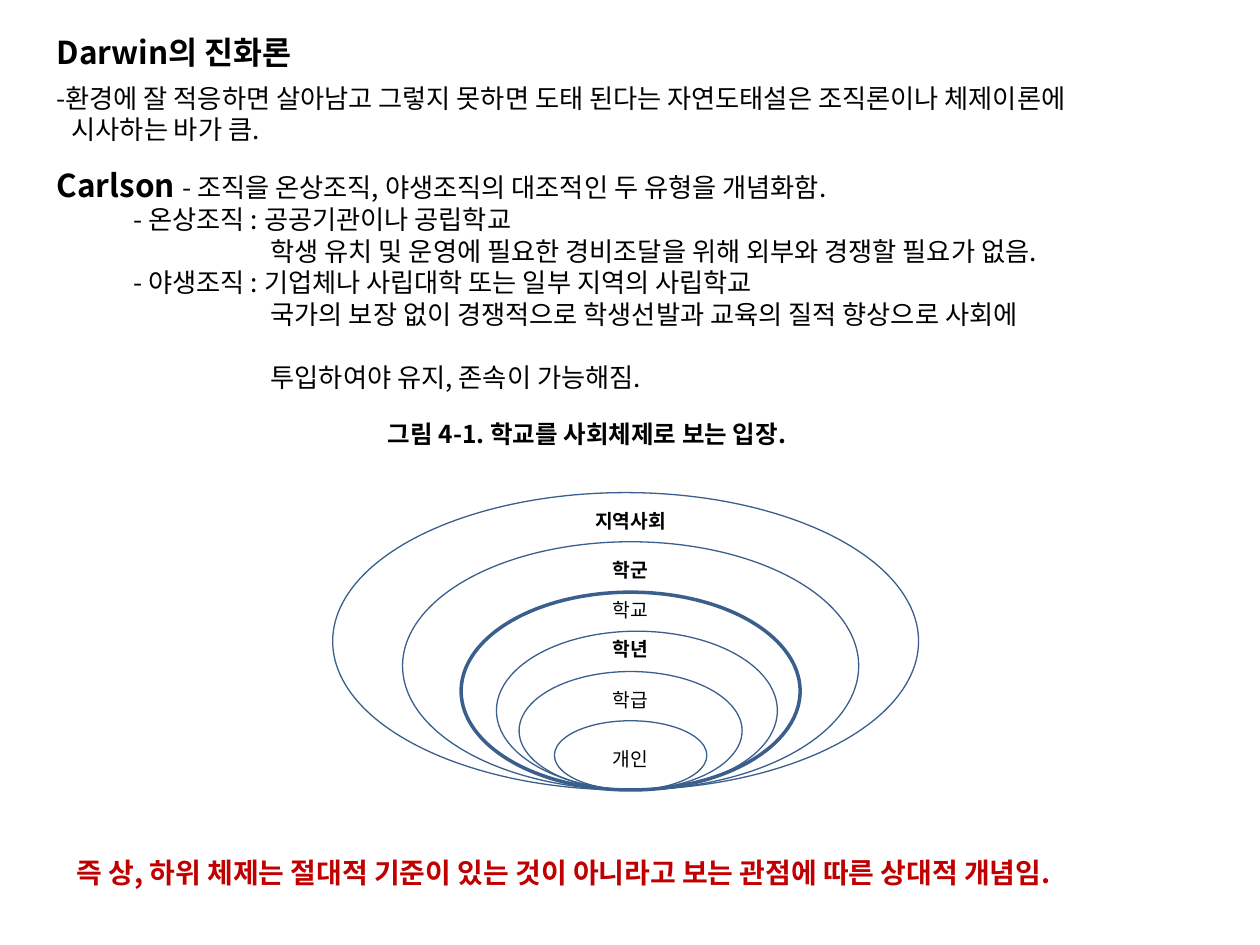
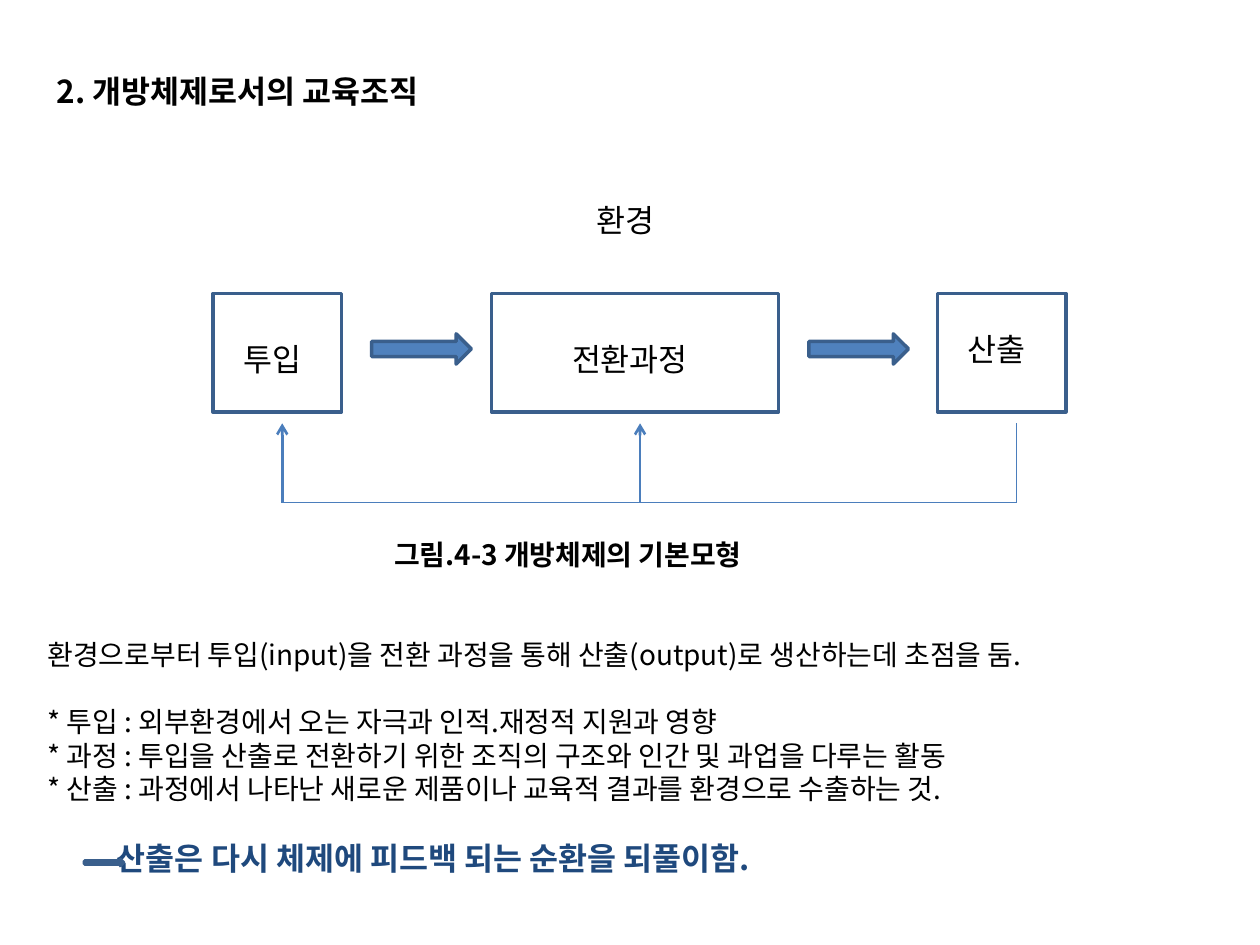
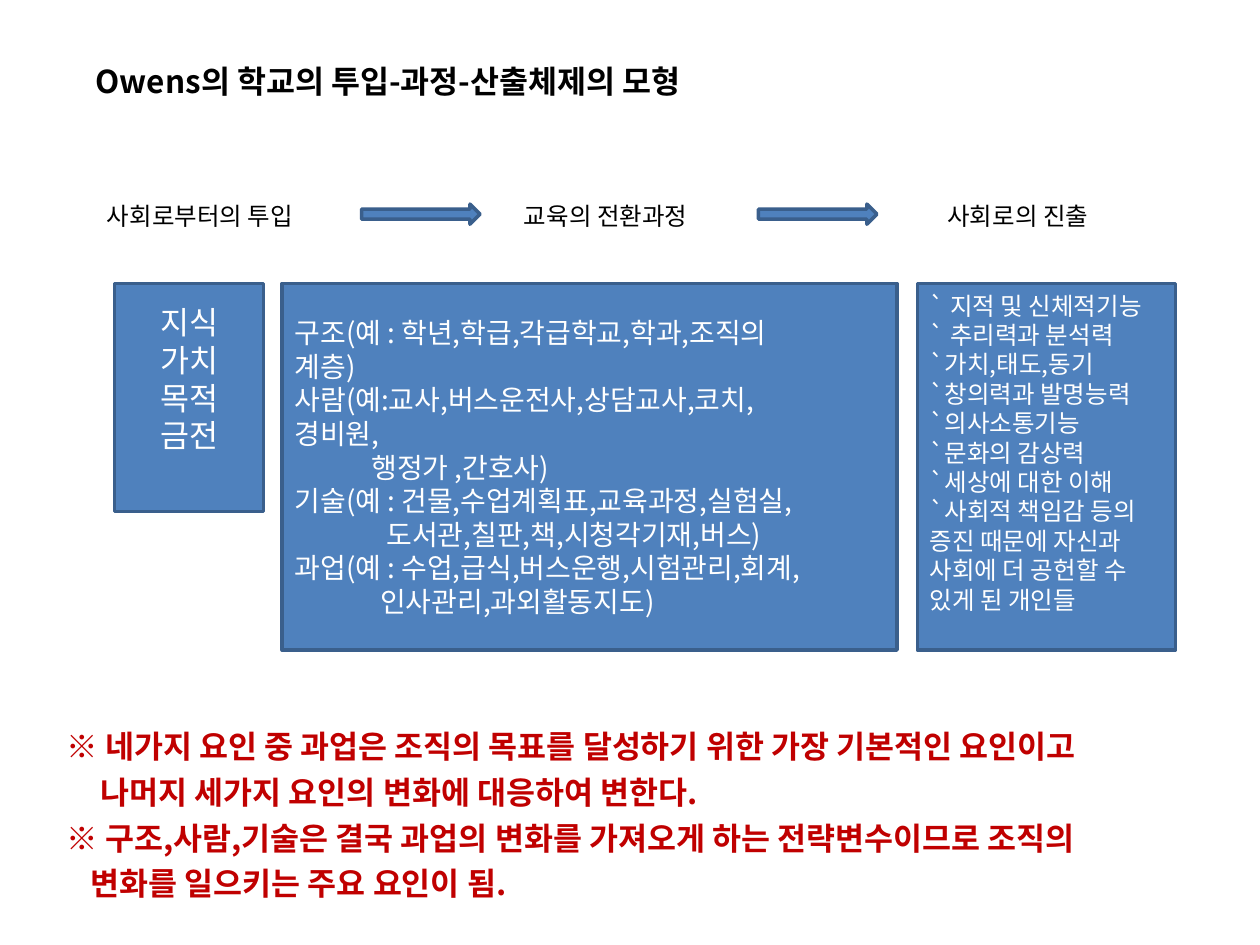
from dataclasses import dataclass

from pptx import Presentation
from pptx.dml.color import RGBColor as Rgb
from pptx.enum.shapes import MSO_CONNECTOR as Conn, MSO_SHAPE as Kind
from pptx.enum.text import MSO_ANCHOR as Anchor, MSO_AUTO_SIZE as Auto, PP_ALIGN as Align
from pptx.oxml.ns import qn
from pptx.util import Inches, Pt
from lxml.etree import SubElement as Sub


@dataclass(frozen=True)
class Theme:
    font: str = "Noto Sans CJK KR"
    ink: str = "000000"
    white: str = "FFFFFF"
    red: str = "C00000"
    navy: str = "1F497D"
    fill: str = "4F81BD"
    edge: str = "3A5F8C"
    wire: str = "4B7EBC"
    head: int = 18
    note: int = 16
    body: int = 15
    small: int = 14
    tiny: int = 11
    thin: float = 0.75
    mid: float = 1.5
    thick: float = 2
    lead: float = 1.2
    loose: float = 1.45


T = Theme()


def color(code):
    return Rgb.from_string(code)


def add_run(para, words, size, bold, ink):
    run = para.add_run()
    run.text = words
    font = run.font
    font.name, font.size, font.bold = T.font, Pt(size), bold
    font.color.rgb = color(ink)
    Sub(run._r.get_or_add_rPr(), qn("a:ea")).set("typeface", T.font)


def write(frame, lines, size=T.head, bold=False, ink=T.ink, align=Align.LEFT,
          anchor=Anchor.TOP, pitch=T.lead):
    frame.word_wrap = True
    frame.auto_size = Auto.NONE
    frame.vertical_anchor = anchor
    for i, line in enumerate([lines] if isinstance(lines, str) else lines):
        words, own = (line, {}) if isinstance(line, str) else line
        para = frame.add_paragraph() if i else frame.paragraphs[0]
        para.alignment = align
        look = own.get("size", size), own.get("bold", bold), own.get("ink", ink)
        tall = T.head if "lead" in own else look[0]
        para.line_spacing = Pt(round(tall * pitch, 1))
        para.space_before = Pt(own.get("gap", 0))
        props = para._p.get_or_add_pPr()
        props.set("marL", str(Inches(own.get("dent", 0))))
        props.set("indent", "0")
        if "mark" in own:
            Sub(props, qn("a:buFont")).set("typeface", T.font)
            Sub(props, qn("a:buChar")).set("char", own["mark"])
        if "lead" in own:
            add_run(para, own["lead"], T.head, True, ink)
        for n, part in enumerate(words.split("\n")):
            if n:
                para.add_line_break()
            add_run(para, part, *look)


def rect(box):
    return [Inches(v) for v in box]


def label(slide, box, lines, **look):
    write(slide.shapes.add_textbox(*rect(box)).text_frame, lines, **look)


def shape(slide, kind, box, fill=None, width=T.thick):
    item = slide.shapes.add_shape(kind, *rect(box))
    item.shadow.inherit = False
    if fill:
        item.fill.solid()
        item.fill.fore_color.rgb = color(fill)
    else:
        item.fill.background()
    item.line.color.rgb = color(T.edge)
    item.line.width = Pt(width)
    return item


def arrow(slide, box):
    shape(slide, Kind.RIGHT_ARROW, box, T.fill)


def wire(slide, start, end, width=T.thin, tip=False):
    line = slide.shapes.add_connector(Conn.STRAIGHT, *rect(start + end))
    line.line.color.rgb = color(T.wire)
    line.line.width = Pt(width)
    if tip:
        Sub(line.line._get_or_add_ln(), qn("a:tailEnd")).set("type", "arrow")
    Sub(line._element.spPr, qn("a:effectLst"))


def start(deck, title, box):
    slide = deck.slides.add_slide(deck.slide_layouts[5])
    head = slide.shapes.title
    head.left, head.top, head.width, head.height = rect(box)
    write(head.text_frame, title, bold=True)
    return slide


def rings(slide, box):
    left, top, wide, high = box
    mid, base = left + wide / 2, top + high
    levels = [
        ("개인", 1.21, 0.55, 0.16, False),
        ("학급", 1.77, 0.94, 0.08, False),
        ("학년", 2.23, 1.26, 0, True),
        ("학교", 2.69, 1.57, 0, False),
        ("학군", 3.62, 1.97, 0.08, True),
        ("지역사회", wide, high, 0.08, True),
    ]
    for name, w, h, drop, bold in levels:
        width = T.thick if name == "학교" else T.thin
        nudge = {"지역사회": -0.04, "학년": 0.05}.get(name, 0)
        ring = mid + 0.04 + nudge - w / 2
        shape(slide, Kind.OVAL, (ring, base - h, w, h), width=width)
        label(slide, (mid - 0.47, base - h + drop, 1.02, 0.29), name,
              size=T.tiny, bold=bold, align=Align.CENTER)


def theory(deck):
    slide = start(deck, "Darwin의 진화론", (0.35, 0.21, 4, 0.4))
    item, more = {"dent": 0.61}, {"dent": 1.7}
    label(slide, (0.35, 0.6, 9.21, 2.59), [
        ("환경에 잘 적응하면 살아남고 그렇지 못하면 도태 된다는 자연도태설은 조직론이나 체제이론에",
         {"mark": "-"}),
        ("시사하는 바가 큼.", {"dent": 0.12}),
        ("- 조직을 온상조직, 야생조직의 대조적인 두 유형을 개념화함.",
         {"lead": "Carlson ", "gap": 12}),
        ("- 온상조직 : 공공기관이나 공립학교", item),
        ("학생 유치 및 운영에 필요한 경비조달을 위해 외부와 경쟁할 필요가 없음.", more),
        ("- 야생조직 : 기업체나 사립대학 또는 일부 지역의 사립학교", item),
        ("국가의 보장 없이 경쟁적으로 학생선발과 교육의 질적 향상으로 사회에", more),
        ("투입하여야 유지, 존속이 가능해짐.", {"dent": 1.7, "gap": 18}),
    ], size=T.body)
    label(slide, (2.98, 3.28, 4.2, 0.34), "그림 4-1. 학교를 사회체제로 보는 입장.",
          size=T.small, bold=True)
    rings(slide, (2.64, 3.91, 4.65, 2.36))
    label(slide, (0.51, 6.74, 9.21, 0.37),
          "즉 상, 하위 체제는 절대적 기준이 있는 것이 아니라고 보는 관점에 따른 상대적 개념임.",
          size=T.note, bold=True, ink=T.red)


def flow(slide, box):
    left, top, wide, high = box
    label(slide, (left + 2.76, top - 0.78, 1.02, 0.4), "환경", align=Align.CENTER)
    stages = [("투입", 0, 1.02, 0.32), ("전환과정", 2.21, 2.28, 0.32),
              ("산출", wide - 1.02, 1.02, 0.24)]
    for name, x, w, drop in stages:
        shape(slide, Kind.RECTANGLE, (left + x, top, w, high))
        label(slide, (left + x - 0.04, top + drop, w, 0.4), name, align=Align.CENTER)
    for x in (1.26, 4.73):
        arrow(slide, (left + x, top + 0.32, 0.79, 0.24))
    near, low = top + high + 0.09, top + high + 0.72
    first, last = left + 0.55, left + wide - 0.39
    wire(slide, (last, low), (first, low))
    for x in (first, left + 3.39):
        wire(slide, (x, low), (x, near), T.mid, True)
    wire(slide, (last, near), (last, low))


def system(deck):
    slide = start(deck, "2. 개방체제로서의 교육조직", (0.35, 0.52, 5, 0.4))
    flow(slide, (1.69, 2.33, 6.77, 0.94))
    label(slide, (3.03, 4.22, 4, 0.37), "그림.4-3 개방체제의 기본모형",
          size=T.note, bold=True)
    label(slide, (0.28, 5.01, 9.29, 2.02), [
        "환경으로부터 투입(input)을 전환 과정을 통해 산출(output)로 생산하는데 초점을 둠.",
        ("* 투입 : 외부환경에서 오는 자극과 인적.재정적 지원과 영향", {"gap": 19.2}),
        "* 과정 : 투입을 산출로 전환하기 위한 조직의 구조와 인간 및 과업을 다루는 활동",
        "* 산출 : 과정에서 나타난 새로운 제품이나 교육적 결과를 환경으로 수출하는 것.",
        ("산출은 다시 체제에 피드백 되는 순환을 되풀이함.",
         {"size": T.head, "bold": True, "ink": T.navy, "gap": 19.2, "dent": 0.55}),
    ], size=T.note)
    arrow(slide, (0.67, 6.82, 0.31, 0.05))


def panel(slide, box, lines, foot=0, **look):
    frame = shape(slide, Kind.RECTANGLE, box, T.fill).text_frame
    frame.margin_bottom = Inches(0.05 + foot)
    write(frame, lines, ink=T.white, anchor=Anchor.MIDDLE, **look)


def stages(slide, box):
    left, top, wide, high = box
    for name, x in (("사회로부터의 투입", -0.16), ("교육의 전환과정", 3.15), ("사회로의 진출", 6.51)):
        label(slide, (left + x, top - 0.7, 1.95, 0.34), name, size=T.small)
    for x in (1.96, 5.11):
        arrow(slide, (left + x, top - 0.63, 0.94, 0.16))
    panel(slide, (left, top, 1.18, 1.81), ["지식", "가치", "목적", "금전"],
          foot=0.3, align=Align.CENTER)
    panel(slide, (left + 1.33, top, 4.88, high), [
        "구조(예 : 학년,학급,각급학교,학과,조직의\n계층)",
        "사람(예:교사,버스운전사,상담교사,코치,\n경비원,",
        ("행정가 ,간호사)", {"dent": 0.61}),
        "기술(예 : 건물,수업계획표,교육과정,실험실,",
        ("도서관,칠판,책,시청각기재,버스)", {"dent": 0.73}),
        "과업(예 : 수업,급식,버스운행,시험관리,회계,",
        ("인사관리,과외활동지도)", {"dent": 0.68}),
    ], size=T.note)
    panel(slide, (left + wide - 2.05, top, 2.05, high), [
        "` 지적 및 신체적기능", "` 추리력과 분석력", "`가치,태도,동기", "`창의력과 발명능력",
        "`의사소통기능", "`문화의 감상력", "`세상에 대한 이해",
        "`사회적 책임감 등의\n증진 때문에 자신과\n사회에 더 공헌할 수\n있게 된 개인들",
    ], foot=0.23, size=T.small)


def remark(slide, box):
    cell = slide.shapes.add_table(1, 1, *rect(box)).table.cell(0, 0)
    cell.fill.solid()
    cell.fill.fore_color.rgb = color(T.white)
    cell.margin_top = Inches(0.41)
    write(cell.text_frame, [
        "※ 네가지 요인 중 과업은 조직의 목표를 달성하기 위한 가장 기본적인 요인이고",
        ("나머지 세가지 요인의 변화에 대응하여 변한다.", {"dent": 0.27}),
        "※ 구조,사람,기술은 결국 과업의 변화를 가져오게 하는 전략변수이므로 조직의",
        ("변화를 일으키는 주요 요인이 됨.", {"dent": 0.19}),
    ], bold=True, ink=T.red, pitch=T.loose)


def model(deck):
    slide = start(deck, "Owens의 학교의 투입-과정-산출체제의 모형", (0.66, 0.44, 5.6, 0.4))
    stages(slide, (0.91, 2.25, 8.42, 2.91))
    remark(slide, (0.43, 5.32, 9.29, 1.9))


def main():
    deck = Presentation()
    deck.slide_width, deck.slide_height = Inches(10), Inches(7.5)
    for build in (theory, system, model):
        build(deck)
    deck.save("out.pptx")


if __name__ == "__main__":
    main()
